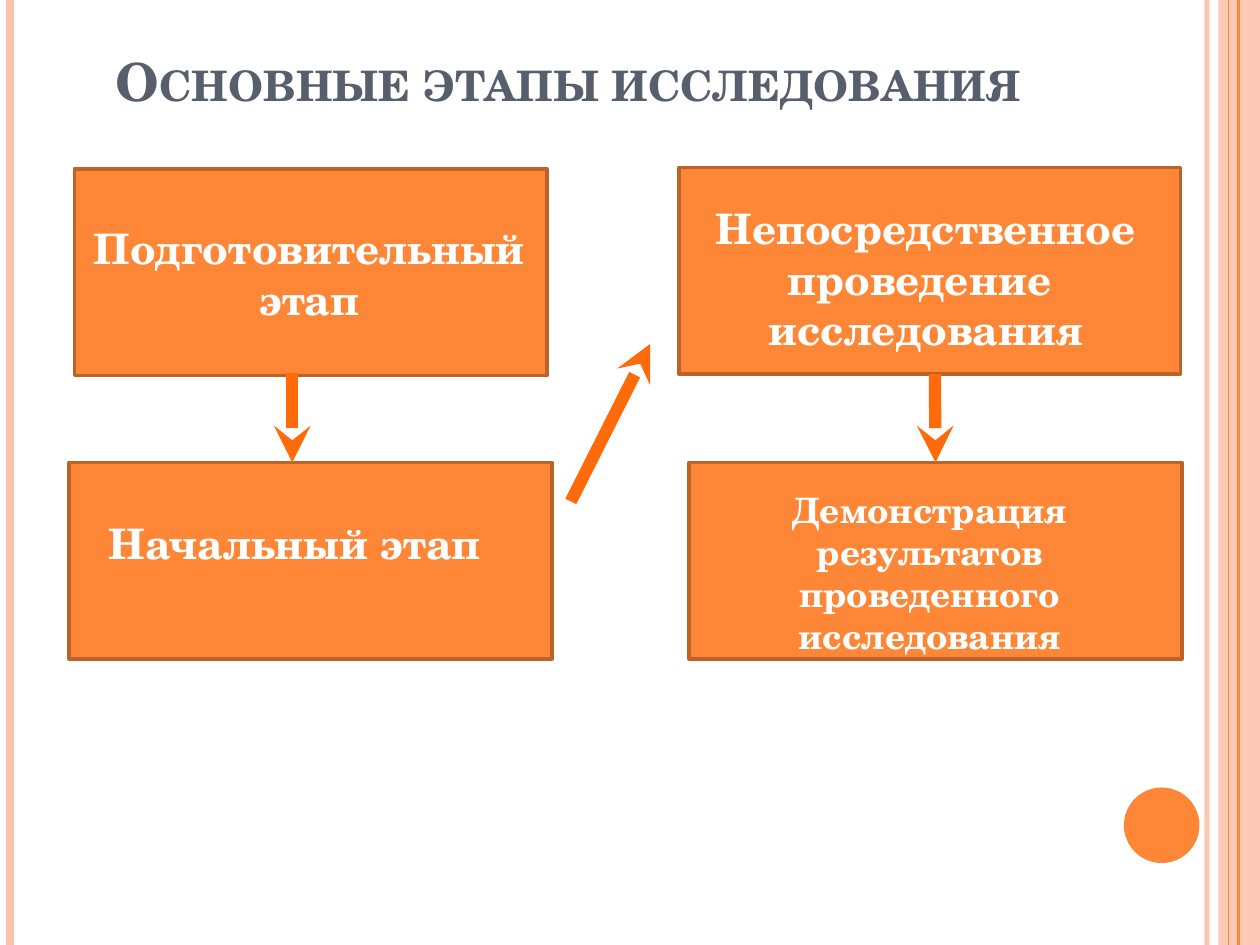
from lxml.etree import SubElement
from pptx import Presentation
from pptx.dml.color import RGBColor
from pptx.enum.shapes import MSO_CONNECTOR, MSO_SHAPE
from pptx.enum.text import MSO_ANCHOR, MSO_AUTO_SIZE, PP_ALIGN
from pptx.oxml.ns import qn
from pptx.util import Inches, Pt

ORANGE, PINK, BORDER, ARROW = "FE8637", "FEC3AE", "BC6329", "FF6B0A"
WHITE, SLATE = "FFFFFF", "575F6D"
TITLE = "Основные этапы исследования "

# Vertical stripes: x, colour, width in points, opacity in percent
STRIPES = [
    (9.58, PINK, 3, 93),
    (0.08, PINK, 4.5, 100),
    (9.83, ORANGE, 1.5, 100),
    (9.75, ORANGE, 0.75, 100),
]

# Stages: panel area, label area, label paragraphs, text size
STAGES = {
    "preparation": ((0.59, 1.34, 3.75, 1.64), (0.62, 1.72, 3.67, 0.91),
                    ["Подготовительный этап"], 24),
    "start": ((0.55, 3.67, 3.83, 1.56), (0.62, 4.06, 3.44, 0.5),
              ["Начальный этап"], 24),
    "research": ((5.39, 1.33, 3.98, 1.64), (5.47, 1.56, 3.75, 1.31),
                 ["Непосредственное проведение ", "исследования"], 24),
    "results": ((5.47, 3.67, 3.91, 1.56), (5.31, 3.83, 4.14, 1.11),
                ["Демонстрация результатов проведенного исследования"], 20),
}


def color(value):
    return RGBColor.from_string(value)


def apply(target, values):
    """Set each named attribute of target."""
    for name, value in values.items():
        setattr(target, name, value)


def set_opacity(fill, percent):
    if percent < 100:
        node = fill._xPr.find(qn("a:solidFill"))[0]
        SubElement(node, qn("a:alpha"), val=str(percent * 1000))


class SlideBuilder:
    font = {"name": "TeX Gyre Schola", "bold": True}

    def __init__(self, slide):
        self.slide = slide

    def add_text(self, text_frame, paragraphs, size, text_color):
        for index, text in enumerate(paragraphs):
            paragraph = text_frame.paragraphs[0] if index == 0 else text_frame.add_paragraph()
            paragraph.alignment = PP_ALIGN.CENTER
            run = paragraph.add_run()
            run.text = text
            apply(run.font, {**self.font, "size": Pt(size)})
            run.font.color.rgb = color(text_color)

    def title(self, area, text):
        shape = self.slide.shapes.title
        apply(shape, dict(zip(("left", "top", "width", "height"), map(Inches, area))))
        shape.text_frame.vertical_anchor = MSO_ANCHOR.BOTTOM
        self.add_text(shape.text_frame, [text], 30, SLATE)
        run = shape.text_frame.paragraphs[0].runs[0]
        run.font._element.set("cap", "small")

    def shape(self, kind, area, fill, border=None, opacity=100):
        shape = self.slide.shapes.add_shape(kind, *map(Inches, area))
        shape.shadow.inherit = False
        shape.fill.solid()
        shape.fill.fore_color.rgb = color(fill)
        set_opacity(shape.fill, opacity)
        if border:
            shape.line.color.rgb = color(border)
            shape.line.width = Pt(2)
        else:
            shape.line.fill.background()
        return shape

    def label(self, area, paragraphs, size):
        text_frame = self.slide.shapes.add_textbox(*map(Inches, area)).text_frame
        apply(text_frame, {"word_wrap": True, "auto_size": MSO_AUTO_SIZE.SHAPE_TO_FIT_TEXT})
        self.add_text(text_frame, paragraphs, size, WHITE)

    def line(self, start, end, line_color, width, opacity=100):
        connector = self.slide.shapes.add_connector(
            MSO_CONNECTOR.STRAIGHT, *map(Inches, (*start, *end)))
        connector.line.color.rgb = color(line_color)
        connector.line.width = Pt(width)
        set_opacity(connector.line.fill, opacity)
        SubElement(connector._element.spPr, qn("a:effectLst"))
        return connector

    def arrow(self, start, end):
        connector = self.line(start, end, ARROW, 7)
        line_element = connector._element.spPr.find(qn("a:ln"))
        SubElement(line_element, qn("a:tailEnd"), type="stealth")
        return connector


def main():
    presentation = Presentation()
    presentation.slide_width, presentation.slide_height = Inches(10), Inches(7.5)
    slide = presentation.slides.add_slide(presentation.slide_layouts[5])
    builder = SlideBuilder(slide)

    builder.shape(MSO_SHAPE.RECTANGLE, (9.67, 0, 0.33, 7.5), PINK, opacity=87)
    for x, stripe_color, width, opacity in STRIPES:
        builder.line((x, 0), (x, 7.5), stripe_color, width, opacity)
    builder.shape(MSO_SHAPE.OVAL, (8.92, 6.25, 0.6, 0.6), ORANGE)

    builder.title((0.47, 0, 8.17, 0.94), TITLE)
    panels = {}
    for name, (panel_area, label_area, paragraphs, size) in STAGES.items():
        panels[name] = builder.shape(MSO_SHAPE.RECTANGLE, panel_area, ORANGE, BORDER)
        builder.label(label_area, paragraphs, size)

    builder.arrow((2.32, 2.96), (2.32, 3.67))
    builder.arrow((4.53, 3.98), (5.16, 2.73))
    builder.arrow((7.42, 2.97), (7.42, 3.67)).end_connect(panels["results"], 0)

    presentation.save("out.pptx")


if __name__ == "__main__":
    main()
